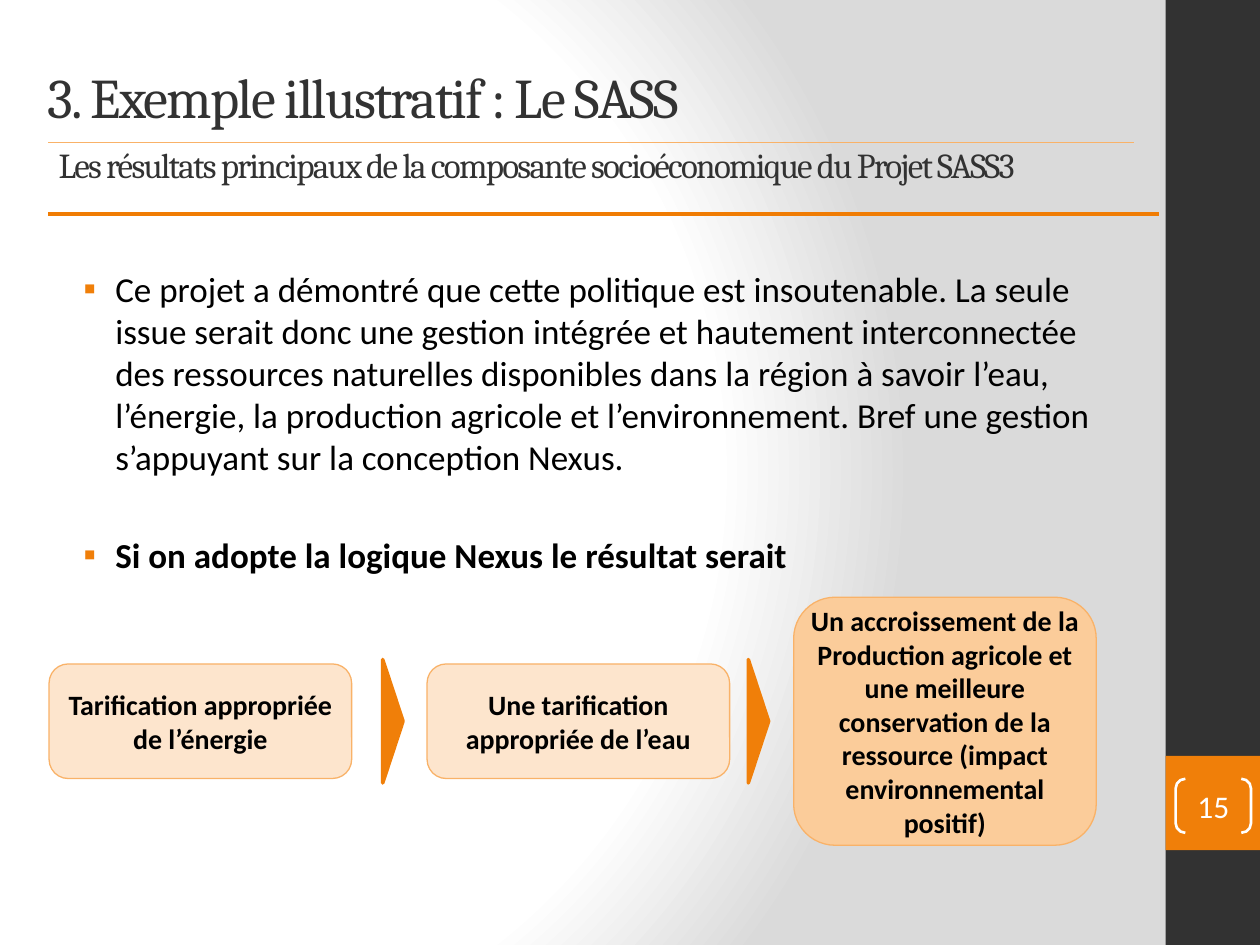
from lxml import etree
from pptx import Presentation
from pptx import util as u
from pptx.dml.color import RGBColor
from pptx.enum import shapes, text
from pptx.oxml.ns import qn

COLOURS = {
    "white": "FFFFFF", "grey": "DADADA", "dark": "323232", "black": "000000",
    "orange": "F07F09", "rule": "F07C03", "edge": "F9B268",
    "step": "FDE5CD", "result": "FBCC9A",
}
HEADING = "3. Exemple illustratif : Le SASS"
SUBHEADING = "Les résultats principaux de la composante socioéconomique du Projet SASS3"
FINDINGS = [
    "Ce projet a démontré que cette politique est insoutenable. La seule issue "
    "serait donc une gestion intégrée et hautement interconnectée des ressources "
    "naturelles disponibles dans la région à savoir l’eau, l’énergie, la production "
    "agricole et l’environnement. Bref une gestion s’appuyant sur la conception Nexus.",
    "Si on adopte la logique Nexus le résultat serait",
]
STEPS = [
    ("Tarification appropriée de l’énergie", 0, 2.31, "step"),
    ("Une tarification appropriée de l’eau", 7.62, 2.31, "step"),
    ("Un accroissement de la Production agricole et une meilleure conservation de "
     "la ressource (impact environnemental positif)", 15.01, 5, "result"),
]


def colour(name):
    """Return the named palette colour."""
    return RGBColor.from_string(COLOURS[name])


def style(run, size, name, font="Calibri", bold=False):
    """Format one run."""
    run.font.size, run.font.name, run.font.bold = u.Pt(size), font, bold
    run.font.color.rgb = colour(name)


def place(part, left, top, width, height):
    """Move a part to a box given in centimetres."""
    part.left, part.top, part.width, part.height = map(u.Cm, (left, top, width, height))


def add_form(slide, preset, box, fill=None, line=None, weight=0.75):
    """Add a flat preset shape with optional fill and line."""
    form = slide.shapes.add_shape(preset, *map(u.Cm, box))
    form.shadow.inherit = False
    if fill:
        form.fill.solid()
        form.fill.fore_color.rgb = colour(fill)
    else:
        form.fill.background()
    if line:
        form.line.color.rgb = colour(line)
        form.line.width = u.Pt(weight)
    else:
        form.line.fill.background()
    return form


def write_centred(form, words, size, name, inset, bold=False):
    """Write centred text inside a shape."""
    frame = form.text_frame
    frame.text = words
    frame.word_wrap = True
    frame.vertical_anchor = text.MSO_ANCHOR.MIDDLE
    frame.margin_left = frame.margin_right = u.Cm(inset)
    frame.margin_top = frame.margin_bottom = u.Cm(inset)
    frame.paragraphs[0].alignment = text.PP_ALIGN.CENTER
    style(frame.paragraphs[0].runs[0], size, name, bold=bold)


def paint_background(slide):
    """Fill the background with a circular white to grey gradient."""
    slide.background.fill.gradient()
    gradient = next(slide.element.iter(qn("a:gradFill")))
    for child in list(gradient):
        gradient.remove(child)
    stops = etree.SubElement(gradient, qn("a:gsLst"))
    for position, name in ((0, "white"), (75, "white"), (100, "grey")):
        stop = etree.SubElement(stops, qn("a:gs"), pos=str(position * 1000))
        etree.SubElement(stop, qn("a:srgbClr"), val=COLOURS[name])
    circle = etree.SubElement(gradient, qn("a:path"), path="circle")
    etree.SubElement(circle, qn("a:fillToRect"), l="20000", t="50000", r="100000", b="50000")


def add_sidebar(slide, left, top, width, height):
    """Draw the dark band with the page number tile."""
    preset = shapes.MSO_SHAPE
    add_form(slide, preset.RECTANGLE, (left, top, width, height), "dark")
    add_form(slide, preset.RECTANGLE, (left, top + 15.24, width, width), "orange")
    number = add_form(slide, preset.DOUBLE_BRACKET, (left + 0.2, top + 15.7, 1.52, 1.09),
                      line="white", weight=1.5)
    number.adjustments[0] = 0.18
    write_centred(number, "15", 18, "white", 0)


def add_rule(slide, left, top, width, name, weight):
    """Draw a horizontal rule."""
    rule = slide.shapes.add_connector(
        shapes.MSO_CONNECTOR.STRAIGHT, u.Cm(left), u.Cm(top), u.Cm(left + width), u.Cm(top))
    rule.line.color.rgb = colour(name)
    rule.line.width = u.Pt(weight)
    etree.SubElement(rule.element.spPr, qn("a:effectLst"))


def add_header(slide, left, top, width, height):
    """Fill the title and draw its two rules."""
    add_rule(slide, left + 0.26, top + 1.93, width - 0.26, "edge", 0.75)
    add_rule(slide, left + 0.26, top + 3.38, width + 0.25, "rule", 2.25)
    title = slide.shapes.title
    place(title, left, top, width, height)
    frame = title.text_frame
    frame.auto_size = text.MSO_AUTO_SIZE.NONE
    frame.vertical_anchor = text.MSO_ANCHOR.MIDDLE
    heading = frame.paragraphs[0]
    heading.text = HEADING + "\v "
    heading.alignment = text.PP_ALIGN.LEFT
    heading.add_run().text = SUBHEADING
    for run, size in zip(heading.runs, (32, 28, 20)):
        style(run, size, "dark", "Cambria")
        run.font._element.set("spc", "-100")


def add_findings(slide, left, top, width, height):
    """Fill the bulleted list."""
    body = slide.placeholders[1]
    place(body, left, top, width, height)
    frame = body.text_frame
    frame.text = "\n".join(FINDINGS)
    frame.auto_size = text.MSO_AUTO_SIZE.NONE
    frame.margin_top = u.Cm(1.13)
    for finding, gap, bold in zip(frame.paragraphs, (0, 32), (False, True)):
        finding.space_before = u.Pt(gap)
        style(finding.runs[0], 20, "black", bold=bold)
        props = finding._p.get_or_add_pPr()
        props.set("marL", str(u.Cm(0.95)))
        props.set("indent", str(u.Cm(-0.64)))
        tint = etree.SubElement(props, qn("a:buClr"))
        etree.SubElement(tint, qn("a:srgbClr"), val=COLOURS["orange"])
        etree.SubElement(props, qn("a:buFont"), typeface="Calibri")
        etree.SubElement(props, qn("a:buChar"), char="▪")


def add_flow(slide, left, top, height):
    """Draw the three steps and the arrowheads between them."""
    middle = top + height / 2
    for words, offset, tall, fill in STEPS:
        step = add_form(slide, shapes.MSO_SHAPE.ROUNDED_RECTANGLE,
                        (left + offset, middle - tall / 2, 6.1, tall), fill, "edge")
        write_centred(step, words, 16, "black", 0.1, bold=True)
    long, thick = 2.49, 0.41
    for centre in (6.93, 14.3):
        arrow = add_form(slide, shapes.MSO_SHAPE.ISOSCELES_TRIANGLE,
                         (left + centre - long / 2, middle - thick / 2, long, thick),
                         "orange", "orange", 2)
        arrow.rotation = 90


def main():
    """Build and save the slide."""
    deck = Presentation()
    deck.slide_width, deck.slide_height = u.Cm(25.4), u.Cm(19.05)
    slide = deck.slides.add_slide(deck.slide_layouts[1])
    paint_background(slide)
    add_sidebar(slide, 23.5, 0, 1.9, 19.05)
    add_header(slide, 0.71, 0.94, 22.15, 3.18)
    add_findings(slide, 1.12, 4.27, 21.16, 7.06)
    add_flow(slide, 0.99, 12.04, 5)
    deck.save("out.pptx")


if __name__ == "__main__":
    main()
